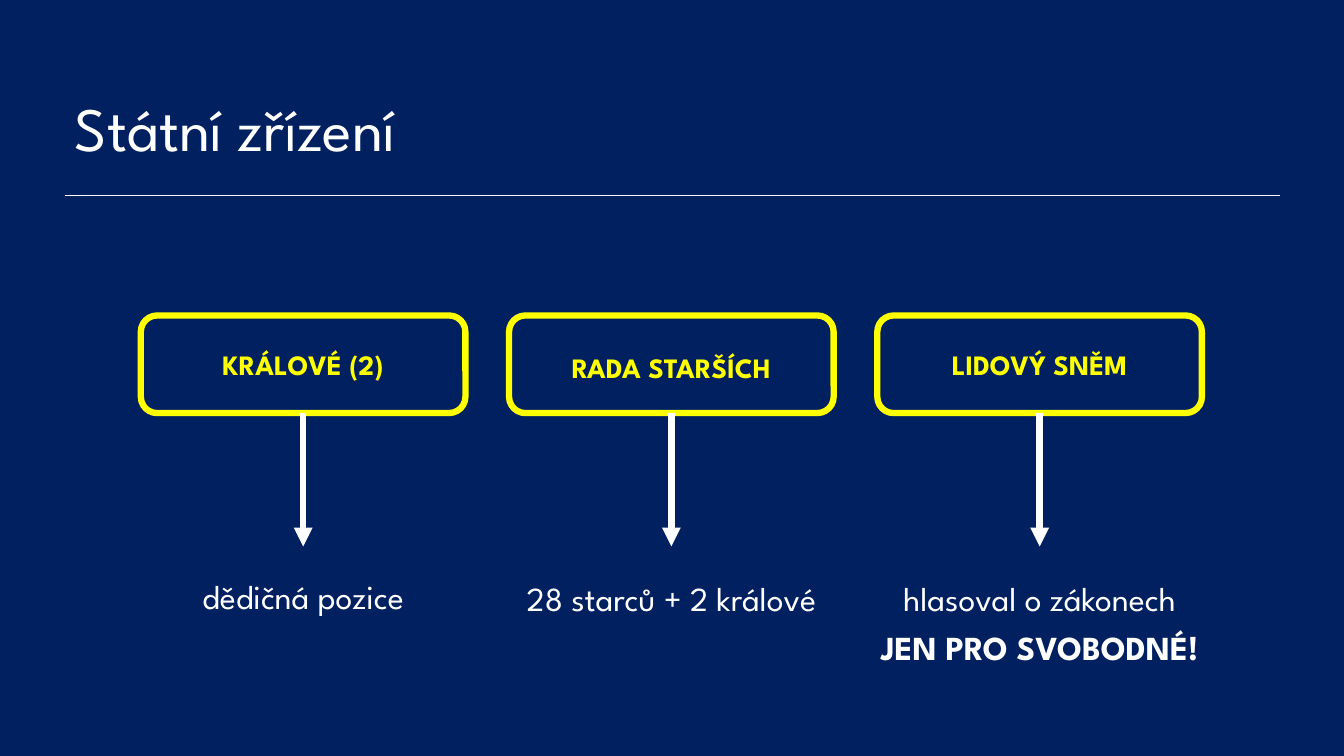
from lxml import etree
from pptx import Presentation
from pptx.dml.color import RGBColor
from pptx.enum import shapes, text
from pptx.oxml.ns import qn
from pptx.util import Cm, Pt

NAVY = RGBColor(0x00, 0x20, 0x60)
WHITE = RGBColor(0xFF, 0xFF, 0xFF)
YELLOW = RGBColor(0xFF, 0xFF, 0x00)
FONT = "League Spartan"

COLUMN_LEFT, COLUMN_TOP, COLUMN_PITCH = 3.55, 7.95, 9.28
BOX_W, BOX_H = 8.18, 2.46
# heading, heading top, note lines, note top, note width (cm)
BODIES = [
    ("KRÁLOVÉ (2)", 8.64, ["dědičná pozice"], 14.38, 7.47),
    ("RADA STARŠÍCH", 8.71, ["28 starců + 2 králové"], 14.45, 8.89),
    ("LIDOVÝ SNĚM", 8.64, ["hlasoval o zákonech", "JEN PRO SVOBODNÉ!"], 14.45, 9.37),
]


def format_paragraph(p, size, color, bold=False):
    for r in p.runs:
        r.font.name, r.font.size, r.font.bold = FONT, Pt(size), bold
        r.font.color.rgb = color


def add_line(s, x1, y1, x2, y2, width):
    line = s.shapes.add_connector(
        shapes.MSO_CONNECTOR.STRAIGHT, Cm(x1), Cm(y1), Cm(x2), Cm(y2))
    line.line.color.rgb = WHITE
    line.line.width = Pt(width)
    etree.SubElement(line._element.spPr, qn("a:effectLst"))
    return line


def add_centred_text(s, center, top, width, height, lines, size, color):
    tb = s.shapes.add_textbox(Cm(center - width / 2), Cm(top), Cm(width), Cm(height))
    tf = tb.text_frame
    tf.word_wrap = True
    tf.auto_size = text.MSO_AUTO_SIZE.SHAPE_TO_FIT_TEXT
    tf.text = "\n".join(lines)
    for p in tf.paragraphs:
        p.alignment = text.PP_ALIGN.CENTER
        format_paragraph(p, size, color, bold=p.text.isupper())
    for p in tf.paragraphs[:-1]:
        p.space_after = Pt(6)


def add_header(s, left, top, width, height):
    title = s.shapes.title
    title.left, title.top, title.width, title.height = map(Cm, (left, top, width, height))
    tf = title.text_frame
    tf.text = "Státní zřízení"
    tf.word_wrap = True
    tf.auto_size = text.MSO_AUTO_SIZE.NONE
    tf.vertical_anchor = text.MSO_ANCHOR.TOP
    p = tf.paragraphs[0]
    p.alignment = text.PP_ALIGN.LEFT
    p.line_spacing = 0.9
    format_paragraph(p, 44, WHITE)
    rule_y = top + height + 0.06
    add_line(s, left, rule_y, left + 30.63, rule_y, 0.5)


def add_column(s, left, top, body):
    """Outlined heading with an arrow down to its note."""
    heading, heading_top, note, note_top, note_w = body
    center = left + BOX_W / 2
    box = s.shapes.add_shape(shapes.MSO_SHAPE.ROUNDED_RECTANGLE,
                             Cm(left), Cm(top), Cm(BOX_W), Cm(BOX_H))
    box.shadow.inherit = False
    box.fill.background()
    box.line.color.rgb = YELLOW
    box.line.width = Pt(4.5)
    add_centred_text(s, center, heading_top, 7.54, 1.11, [heading], 20, YELLOW)

    arrow = add_line(s, center, top + BOX_H, center, top + 5.82, 4.5)
    arrow.begin_connect(box, 2)
    etree.SubElement(arrow.line._get_or_add_ln(), qn("a:tailEnd"), type="triangle")
    add_centred_text(s, center, note_top, note_w, 1.26 * len(note), note, 24, WHITE)


def main():
    prs = Presentation()
    prs.slide_width, prs.slide_height = Cm(33.87), Cm(19.05)
    s = prs.slides.add_slide(prs.slide_layouts[5])
    s.background.fill.solid()
    s.background.fill.fore_color.rgb = NAVY
    add_header(s, 1.63, 2.36, 29.21, 2.51)
    for i, body in enumerate(BODIES):
        add_column(s, COLUMN_LEFT + i * COLUMN_PITCH, COLUMN_TOP, body)
    prs.save("out.pptx")


if __name__ == "__main__":
    main()
